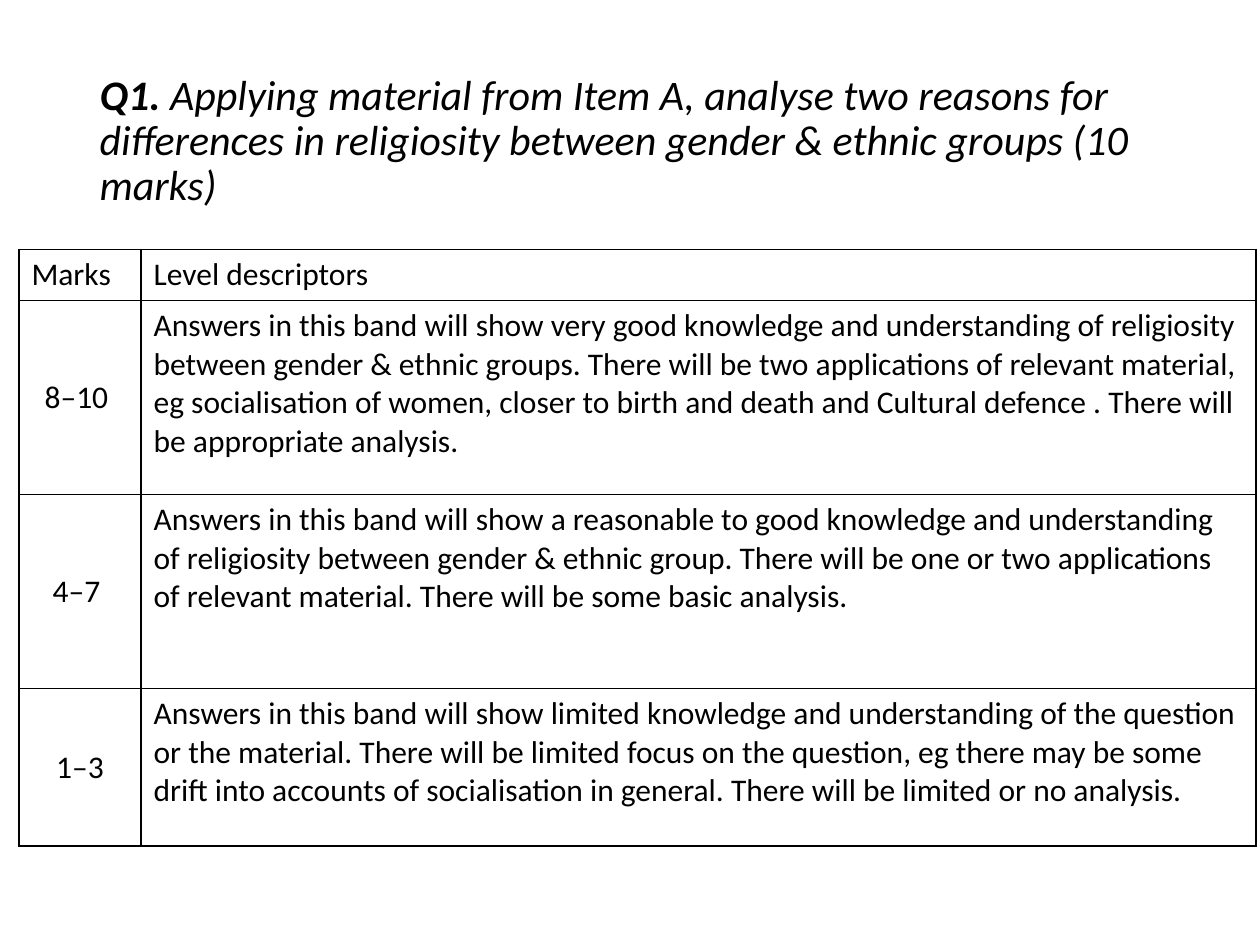
from lxml.etree import SubElement
from pptx import Presentation
from pptx.dml.color import RGBColor
from pptx.enum.text import MSO_ANCHOR, MSO_AUTO_SIZE, PP_ALIGN
from pptx.oxml.ns import qn
from pptx.util import Inches, Pt

COLORS = {"text": "000000", "border": "000000", "background": "FFFFFF"}
FONT = "Calibri"
COL_WIDTHS = [0.97, 8.85]
ROW_HEIGHTS = [0.4, 1.54, 1.54, 1.25]
HEADERS = ("Marks", "Level descriptors")
BANDS = [
    ("8–10 ", "Answers in this band will show very good knowledge and understanding of "
     "religiosity between gender & ethnic groups. There will be two applications of "
     "relevant material, eg socialisation of women, closer to birth and death and "
     "Cultural defence . There will be appropriate analysis."),
    ("4–7 ", "Answers in this band will show a reasonable to good knowledge and "
     "understanding of religiosity between gender & ethnic group. There will be one or "
     "two applications of relevant material. There will be some basic analysis."),
    ("1–3", "Answers in this band will show limited knowledge and understanding of the "
     "question or the material. There will be limited focus on the question, eg there "
     "may be some drift into accounts of socialisation in general. There will be limited "
     "or no analysis."),
]


def add_text(p, text, size=18, bold=False, italic=False, align=PP_ALIGN.LEFT):
    p.alignment = align
    r = p.add_run()
    r.text = text
    r.font.name = FONT
    r.font.size = Pt(size)
    r.font.bold = bold
    r.font.italic = italic
    r.font.color.rgb = RGBColor.from_string(COLORS["text"])


def set_borders(cell, width=Pt(1)):
    """Outline all four sides; call before the fill, which must follow the lines."""
    tcPr = cell._tc.get_or_add_tcPr()
    for side in ("a:lnL", "a:lnR", "a:lnT", "a:lnB"):
        ln = SubElement(tcPr, qn(side), w=str(width))
        fill = SubElement(ln, qn("a:solidFill"))
        SubElement(fill, qn("a:srgbClr"), val=COLORS["border"])


def add_question(s, left, top, width, height):
    title = s.shapes.title
    title.left, title.top, title.width, title.height = left, top, width, height
    tf = title.text_frame
    tf.word_wrap = True
    tf.auto_size = MSO_AUTO_SIZE.NONE
    tf.vertical_anchor = MSO_ANCHOR.MIDDLE
    p = tf.paragraphs[0]
    p.line_spacing = 0.9
    add_text(p, "Q1.", size=24, bold=True, italic=True)
    add_text(p, " Applying material from Item A, analyse two reasons for differences in "
             "religiosity between gender & ethnic groups (10 marks)", size=24, italic=True)


def add_mark_scheme(s, left, top, width, height):
    rows = [HEADERS, *BANDS]
    table = s.shapes.add_table(len(rows), len(HEADERS), left, top, width, height).table
    table.first_row = table.horz_banding = False
    for col, w in zip(table.columns, COL_WIDTHS):
        col.width = Inches(w)
    for row, h in zip(table.rows, ROW_HEIGHTS):
        row.height = Inches(h)
    for i, texts in enumerate(rows):
        for j, text in enumerate(texts):
            cell = table.cell(i, j)
            is_mark = i > 0 and j == 0
            set_borders(cell)
            cell.fill.background()
            cell.vertical_anchor = MSO_ANCHOR.MIDDLE if is_mark else MSO_ANCHOR.TOP
            add_text(cell.text_frame.paragraphs[0], text,
                     align=PP_ALIGN.CENTER if is_mark else PP_ALIGN.LEFT)


def main():
    prs = Presentation()
    prs.slide_width, prs.slide_height = Inches(10), Inches(7.5)
    s = prs.slides.add_slide(prs.slide_layouts.get_by_name("Title Only"))
    s.background.fill.solid()
    s.background.fill.fore_color.rgb = RGBColor.from_string(COLORS["background"])
    add_question(s, Inches(0.69), Inches(0.4), Inches(8.62), Inches(1.45))
    add_mark_scheme(s, Inches(0.15), Inches(1.98),
                    Inches(sum(COL_WIDTHS)), Inches(sum(ROW_HEIGHTS)))
    prs.save("out.pptx")


if __name__ == "__main__":
    main()
